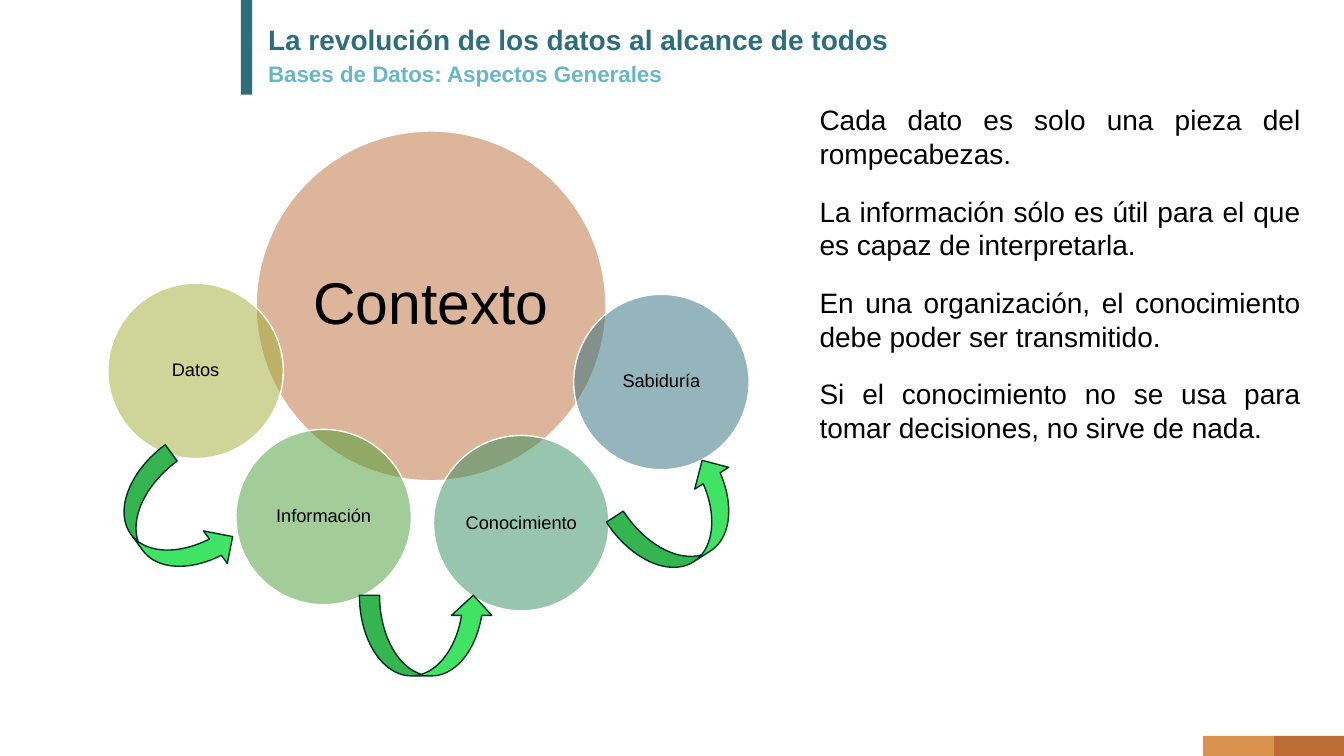
from lxml.etree import SubElement
from pptx import Presentation
from pptx.dml.color import RGBColor
from pptx.enum.shapes import MSO_SHAPE
from pptx.enum.text import MSO_ANCHOR, PP_ALIGN
from pptx.oxml.ns import qn
from pptx.util import Inches, Pt

COLORS = {
    "white": "FFFFFF", "black": "000000", "teal": "2D6D7C", "sky": "69B6C9",
    "orange": "DA924F", "rust": "BD6C36", "olive": "A0AC34", "green": "489C32",
    "emerald": "308C5D", "arrow": "41E365", "arrow_line": "003026",
}
FONT = "Arial"
STAGE_SIZE = 1.74
STAGES = [
    ("Datos", 1.07, 2.81, "olive"),
    ("Información", 2.34, 4.26, "green"),
    ("Conocimiento", 4.3, 4.32, "emerald"),
    ("Sabiduría", 5.69, 2.92, "teal"),
]
ARROWS = [(1.31, 4.52, 323.7), (3.83, 5.64, 270), (6.39, 4.49, 237.2)]
STATEMENTS = [
    "Cada dato es solo una pieza del rompecabezas.",
    "La información sólo es útil para el que es capaz de interpretarla.",
    "En una organización, el conocimiento debe poder ser transmitido.",
    "Si el conocimiento no se usa para tomar decisiones, no sirve de nada.",
]
STATEMENT_TOP, STATEMENT_STEP = 0.97, 0.907


def rgb(name):
    return RGBColor.from_string(COLORS[name])


def write_text(shape, text, size=20, color="black", bold=False,
               align=PP_ALIGN.LEFT, spacing=1.0, wrap=True):
    frame = shape.text_frame
    frame.word_wrap = wrap
    paragraph = frame.paragraphs[0]
    paragraph.text = text
    paragraph.alignment = align
    paragraph.line_spacing = spacing
    font = paragraph.font
    font.name, font.size, font.bold = FONT, Pt(size), bold
    font.color.rgb = rgb(color)


def add_text(slide, left, top, width, height, text, **text_format):
    box = slide.shapes.add_textbox(Inches(left), Inches(top),
                                   Inches(width), Inches(height))
    write_text(box, text, **text_format)


def add_filled_shape(slide, kind, left, top, width, height, fill, line=None):
    shape = slide.shapes.add_shape(kind, Inches(left), Inches(top),
                                   Inches(width), Inches(height))
    shape.shadow.inherit = False
    shape.fill.solid()
    shape.fill.fore_color.rgb = rgb(fill)
    if line:
        shape.line.color.rgb = rgb(line)
        shape.line.width = Pt(1)
    else:
        shape.line.fill.background()
    return shape


def add_circle(slide, text, left, top, diameter, fill, size, inset):
    """Add a half-transparent circle with a centred label."""
    circle = add_filled_shape(slide, MSO_SHAPE.OVAL, left, top,
                              diameter, diameter, fill, "white")
    fill_color = circle.fill._xPr.find(qn("a:solidFill"))[0]
    SubElement(fill_color, qn("a:alpha"), val="50000")
    frame = circle.text_frame
    frame.vertical_anchor = MSO_ANCHOR.MIDDLE
    frame.margin_left = frame.margin_right = Inches(inset)
    frame.margin_top = frame.margin_bottom = Inches(inset)
    write_text(circle, text, size=size, align=PP_ALIGN.CENTER,
               spacing=0.9, wrap=False)


def add_curved_arrow(slide, left, top, rotation):
    arrow = add_filled_shape(slide, MSO_SHAPE.CURVED_RIGHT_ARROW, left, top,
                             0.8, 1.33, "arrow", "arrow_line")
    arrow.rotation = rotation


def add_header(slide):
    add_filled_shape(slide, MSO_SHAPE.RECTANGLE, 2.39, 0, 0.11, 0.94, "teal")
    add_text(slide, 2.56, 0.21, 10.45, 0.4,
             "La revolución de los datos al alcance de todos",
             color="teal", bold=True, spacing=0.9)
    add_text(slide, 2.56, 0.58, 10.45, 0.4,
             "Bases de Datos: Aspectos Generales",
             size=16, color="sky", bold=True, spacing=0.9)


def add_footer(slide):
    for left, color in ((11.93, "orange"), (12.63, "rust")):
        add_filled_shape(slide, MSO_SHAPE.RECTANGLE, left, 7.3, 0.7, 0.2, color)


def main():
    presentation = Presentation()
    presentation.slide_width = Inches(13.33)
    presentation.slide_height = Inches(7.5)
    slide = presentation.slides.add_slide(presentation.slide_layouts[6])

    add_header(slide)
    add_footer(slide)
    add_circle(slide, "Contexto", 2.54, 1.3, 3.47, "rust", size=42, inset=0.06)
    for text, left, top, color in STAGES:
        add_circle(slide, text, left, top, STAGE_SIZE, color, size=13, inset=0.02)
    for left, top, rotation in ARROWS:
        add_curved_arrow(slide, left, top, rotation)
    for index, statement in enumerate(STATEMENTS):
        add_text(slide, 8.03, STATEMENT_TOP + index * STATEMENT_STEP, 4.97, 0.77,
                 statement, align=PP_ALIGN.JUSTIFY)

    presentation.save("out.pptx")


if __name__ == "__main__":
    main()
